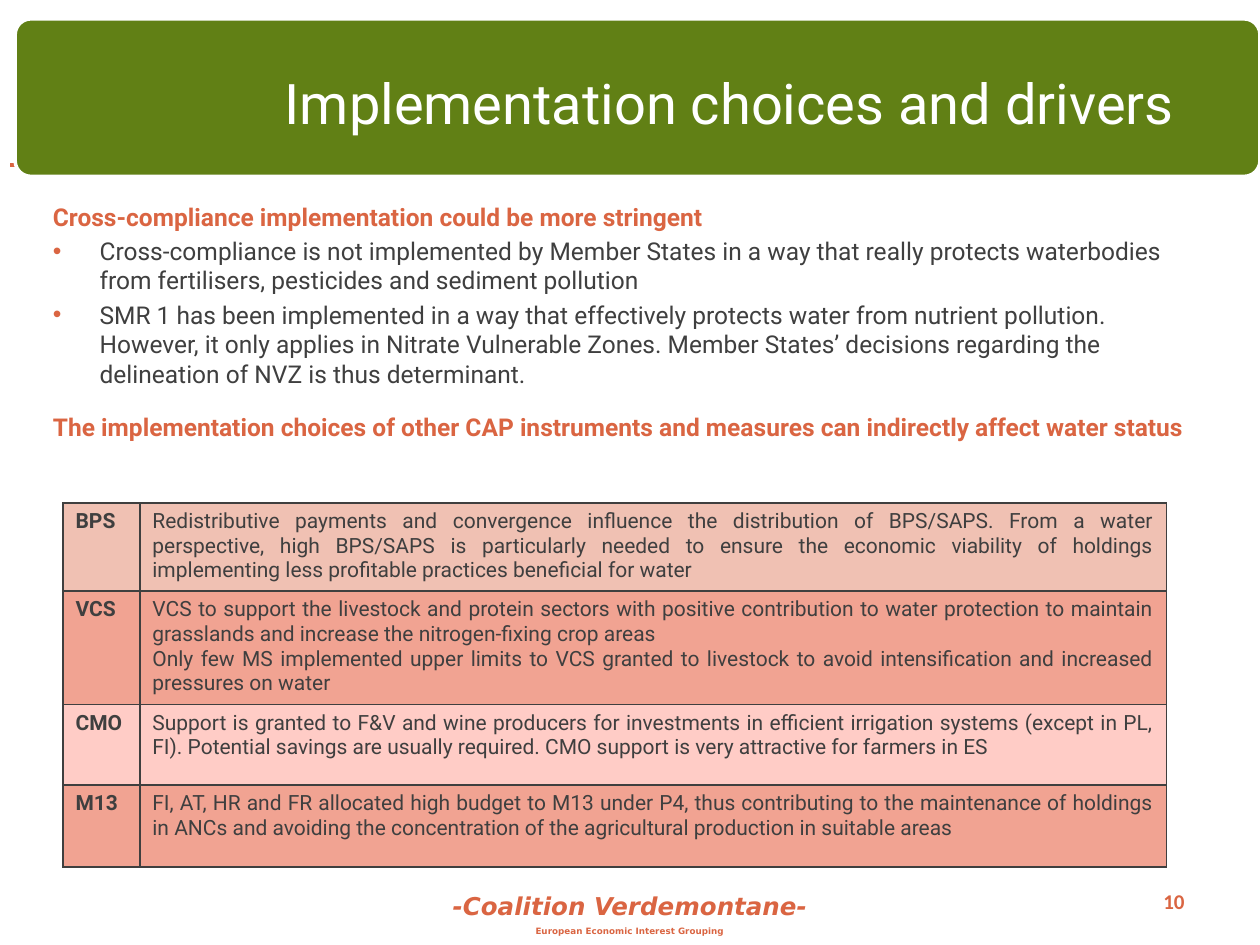
from dataclasses import dataclass

from lxml import etree
from pptx import Presentation
from pptx.dml.color import RGBColor
from pptx.enum.shapes import MSO_CONNECTOR, MSO_SHAPE
from pptx.enum.text import MSO_ANCHOR, MSO_AUTO_SIZE, PP_ALIGN
from pptx.oxml.ns import qn
from pptx.util import Inches, Pt

LEFT, CENTER, RIGHT, JUSTIFY = PP_ALIGN.LEFT, PP_ALIGN.CENTER, PP_ALIGN.RIGHT, PP_ALIGN.JUSTIFY
TOP, MIDDLE = MSO_ANCHOR.TOP, MSO_ANCHOR.MIDDLE
NO_FIT = MSO_AUTO_SIZE.NONE
STRAIGHT, ROUNDED = MSO_CONNECTOR.STRAIGHT, MSO_SHAPE.ROUNDED_RECTANGLE


@dataclass(frozen=True)
class Theme:
    accent: str = "DA6542"
    text: str = "3F3F3F"
    green: str = "618015"
    white: str = "FFFFFF"
    sand: str = "F0C1B3"
    salmon: str = "F1A392"
    pink: str = "FFCCC6"
    font: str = "Roboto"
    footer_font: str = "DejaVu Sans"
    number_font: str = "Calibri"
    title_size: int = 32
    body_size: int = 14
    table_size: int = 12
    small_size: int = 5


theme = Theme()


def style(p, size, color, bold=False, italic=False, font=theme.font, align=LEFT):
    p.alignment = align
    for r in p.runs:
        r.font.name = font
        r.font.size = Pt(size)
        r.font.bold = bold
        r.font.italic = italic
        r.font.color.rgb = RGBColor.from_string(color)


def add_solid(parent, color):
    fill = etree.SubElement(parent, qn("a:solidFill"))
    etree.SubElement(fill, qn("a:srgbClr"), val=color)


prs = Presentation()
prs.slide_width, prs.slide_height = Inches(10), Inches(7.5)
s = prs.slides.add_slide(prs.slide_layouts[1])
title, body = s.shapes.title, s.placeholders[1]

footer = s.shapes.add_textbox(Inches(0), Inches(7.02), Inches(10), Inches(0.48))
tf = footer.text_frame
tf.word_wrap = True
tf.text = "-Coalition Verdemontane-\nEuropean Economic Interest Grouping"
for p, size, italic in zip(tf.paragraphs, (theme.body_size, theme.small_size), (True, False)):
    style(p, size, theme.accent, True, italic, theme.footer_font, CENTER)
    p.space_before = Pt(3)

rule = s.shapes.add_connector(STRAIGHT, Inches(0.08), Inches(1.31), Inches(9.92), Inches(1.31))
rule.line.color.rgb = RGBColor.from_string(theme.accent)
rule.line.width = Pt(2.75)
etree.SubElement(rule._element.spPr, qn("a:effectLst"))

number = s.shapes.add_textbox(Inches(7.17), Inches(6.95), Inches(2.33), Inches(0.4))
tf = number.text_frame
tf.word_wrap = True
tf.vertical_anchor = MIDDLE
tf.text = "10"
style(tf.paragraphs[0], theme.table_size, theme.accent, True, font=theme.number_font, align=RIGHT)

banner = s.shapes.add_shape(ROUNDED, Inches(0.12), Inches(0.15), Inches(9.88), Inches(1.25))
banner.shadow.inherit = False
banner.adjustments[0] = 0.1
banner.fill.solid()
banner.fill.fore_color.rgb = RGBColor.from_string(theme.green)
banner.line.color.rgb = RGBColor.from_string(theme.white)
banner.line.width = Pt(2)

s.shapes._spTree.append(title._element)
title.left, title.top, title.width, title.height = Inches(2.19), Inches(0.22), Inches(7.81), Inches(1.25)
tf = title.text_frame
tf.auto_size = NO_FIT
tf.vertical_anchor = MIDDLE
tf.margin_left = tf.margin_right = tf.margin_top = tf.margin_bottom = Inches(0.07)
tf.text = "Implementation choices and drivers"
p = tf.paragraphs[0]
style(p, theme.title_size, theme.white)
p.line_spacing = 0.9

points = [
    ("Cross-compliance implementation could be more stringent", False, 2.8),
    ("Cross-compliance is not implemented by Member States in a way that really protects "
     "waterbodies from fertilisers, pesticides and sediment pollution", True, 2.8),
    ("SMR 1 has been implemented in a way that effectively protects water from nutrient pollution. "
     "However, it only applies in Nitrate Vulnerable Zones. Member States’ decisions regarding "
     "the delineation of NVZ is thus determinant.", True, 2.8),
    ("The implementation choices of other CAP instruments and measures can indirectly affect "
     "water status", False, 13.5),
]
body.left, body.top, body.width, body.height = Inches(0.32), Inches(1.55), Inches(9.18), Inches(2.2)
tf = body.text_frame
tf.auto_size = NO_FIT
tf.vertical_anchor = TOP
tf.text = "\n".join(text for text, _, _ in points)
for p, (_, bullet, gap) in zip(tf.paragraphs, points):
    style(p, theme.body_size, theme.text if bullet else theme.accent, not bullet)
    p.space_before = Pt(gap)
    pPr = p._p.get_or_add_pPr()
    indent = Inches(0.37) if bullet else 0
    pPr.set("marL", str(indent))
    pPr.set("indent", str(-indent))
    if bullet:
        color = etree.SubElement(pPr, qn("a:buClr"))
        etree.SubElement(color, qn("a:srgbClr"), val=theme.accent)
        etree.SubElement(pPr, qn("a:buFont"), typeface="Arial")
        etree.SubElement(pPr, qn("a:buChar"), char="•")
    else:
        etree.SubElement(pPr, qn("a:buNone"))

rows = [
    ("BPS", "Redistributive payments and convergence influence the distribution of BPS/SAPS. From a "
     "water perspective, high BPS/SAPS is particularly needed to ensure the economic viability of "
     "holdings implementing less profitable practices beneficial for water", theme.sand, 0.7),
    ("VCS", "VCS to support the livestock and protein sectors with positive contribution to water "
     "protection to maintain grasslands and increase the nitrogen-fixing crop areas\n"
     "Only few MS implemented upper limits to VCS granted to livestock to avoid intensification "
     "and increased pressures on water", theme.salmon, 0.9),
    ("CMO", "Support is granted to F&V and wine producers for investments in efficient irrigation "
     "systems (except in PL, FI). Potential savings are usually required. CMO support is very "
     "attractive for farmers in ES", theme.pink, 0.64),
    ("M13", "FI, AT, HR and FR allocated high budget to M13 under P4, thus contributing to the "
     "maintenance of holdings in ANCs and avoiding the concentration of the agricultural "
     "production in suitable areas", theme.salmon, 0.65),
]
frame = s.shapes.add_table(len(rows), 2, Inches(0.5), Inches(3.99), Inches(8.76), Inches(2.89))
table = frame.table
for column, width in zip(table.columns, (0.61, 8.15)):
    column.width = Inches(width)
for i, (code, text, color, height) in enumerate(rows):
    table.rows[i].height = Inches(height)
    for j, content in enumerate((code, text)):
        cell = table.cell(i, j)
        cell.text = content
        for p in cell.text_frame.paragraphs:
            style(p, theme.table_size, theme.text, j == 0, align=JUSTIFY if j else LEFT)
        tcPr = cell._tc.get_or_add_tcPr()
        for side in ("a:lnL", "a:lnR", "a:lnT", "a:lnB"):
            add_solid(etree.SubElement(tcPr, qn(side), w=str(Pt(1))), theme.text)
        cell.fill.solid()
        cell.fill.fore_color.rgb = RGBColor.from_string(color)

prs.save("out.pptx")
